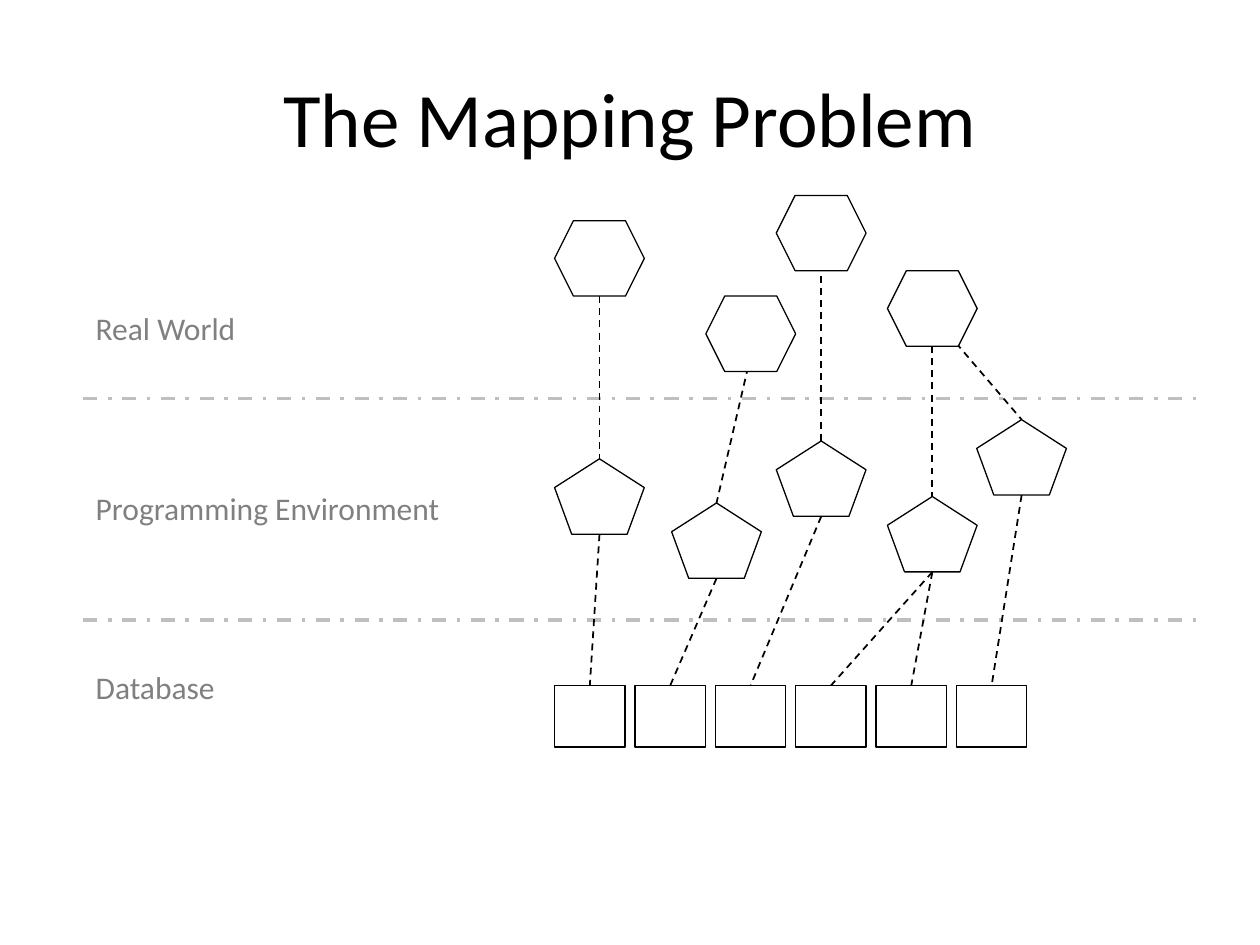
from lxml.etree import SubElement as Sub
from pptx import Presentation as Deck
from pptx.dml.color import RGBColor as Color
from pptx.enum.dml import MSO_LINE_DASH_STYLE as Dash
from pptx.enum.shapes import MSO_CONNECTOR as Wire, MSO_SHAPE as Kind
from pptx.enum.text import MSO_ANCHOR as Anchor, MSO_AUTO_SIZE as Fit, PP_ALIGN as Align
from pptx.oxml.ns import qn
from pptx.util import Cm, Pt

BLACK, GRAY, PALE, WHITE = "000000", "808080", "BFBFBF", "FFFFFF"
NODE_W, NODE_H = 1.81, 1.52
CELL_W, CELL_H, PITCH, CELL_TOP = 1.42, 1.24, 1.62, 9.88

HEXES = [(0, 0.51), (3.05, 2.03), (4.47, 0), (6.71, 1.52)]
PENTS = [(0, 5.31), (2.36, 6.2), (4.47, 4.95), (6.71, 6.07), (8.51, 4.52)]
CELLS = [(i * PITCH, CELL_TOP) for i in range(6)]
UPPER = [(0, 0, 0, 0), (1, 1, 0, -0.33), (2, 2, 0, 0.1), (3, 3, 0, -0.25), (3, 4, 0.32, -0.25)]
LOWER = [(0, 0), (1, 1), (2, 2), (3, 3), (3, 4), (4, 5)]


def paint(code):
    return Color.from_string(code)


def write(frame, text, size=18, color=BLACK, align=Align.LEFT, anchor=Anchor.TOP, wrap=True, fit=Fit.NONE):
    frame.word_wrap, frame.auto_size, frame.vertical_anchor = wrap, fit, anchor
    para = frame.paragraphs[0]
    para.alignment = align
    run = para.add_run()
    run.text = text
    run.font.name, run.font.size = "Calibri", Pt(size)
    run.font.color.rgb = paint(color)


def link(slide, start, end, color=BLACK, width=1, dash=Dash.DASH):
    wire = slide.shapes.add_connector(Wire.STRAIGHT, *map(Cm, (*start, *end)))
    wire.line.color.rgb = paint(color)
    wire.line.width, wire.line.dash_style = Pt(width), dash
    Sub(wire._element.spPr, qn("a:effectLst"))


def draw(slide, kind, left, top, width, height):
    shape = slide.shapes.add_shape(kind, *map(Cm, (left, top, width, height)))
    shape.shadow.inherit = False
    shape.fill.solid()
    shape.fill.fore_color.rgb = paint(WHITE)
    shape.line.color.rgb = paint(BLACK)
    shape.line.width = Pt(0.75)


def add_title(slide, left, top, width, height):
    title = slide.shapes.title
    title.left, title.top, title.width, title.height = map(Cm, (left, top, width, height))
    write(title.text_frame, "The Mapping Problem", size=44, align=Align.CENTER, anchor=Anchor.MIDDLE)


def add_layers(slide, left, top, width):
    for y in (1.93, 6.4):
        link(slide, (left, top + y), (left + width, top + y), PALE, 2, Dash.DASH_DOT)
    labels = [("Real World", 0, 3.35), ("Programming Environment", 3.63, 7.52), ("Database", 7.24, 2.95)]
    for text, y, wide in labels:
        box = slide.shapes.add_textbox(Cm(left), Cm(top + y), Cm(wide), Cm(1.02))
        write(box.text_frame, text, color=GRAY, wrap=False, fit=Fit.SHAPE_TO_FIT_TEXT)


def add_map(slide, left, top):
    def spot(place, dx=0, dy=0):
        return left + place[0] + dx, top + place[1] + dy

    mid = NODE_W / 2
    for a, b, dx, dy in UPPER:
        link(slide, spot(HEXES[a], mid + dx, NODE_H + dy), spot(PENTS[b], mid))
    for a, b in LOWER:
        link(slide, spot(PENTS[a], mid, NODE_H), spot(CELLS[b], CELL_W / 2))
    groups = [
        (Kind.REGULAR_PENTAGON, PENTS, NODE_W, NODE_H),
        (Kind.RECTANGLE, CELLS, CELL_W, CELL_H),
        (Kind.HEXAGON, HEXES, NODE_W, NODE_H),
    ]
    for kind, places, width, height in groups:
        for place in places:
            draw(slide, kind, *spot(place), width, height)


def main():
    deck = Deck()
    deck.slide_width, deck.slide_height = Cm(25.4), Cm(19.05)
    slide = deck.slides.add_slide(deck.slide_layouts[5])
    add_title(slide, 1.27, 0.76, 22.86, 3.18)
    add_layers(slide, 1.68, 6.1, 22.45)
    add_map(slide, 11.18, 3.94)
    deck.save("out.pptx")


if __name__ == "__main__":
    main()
